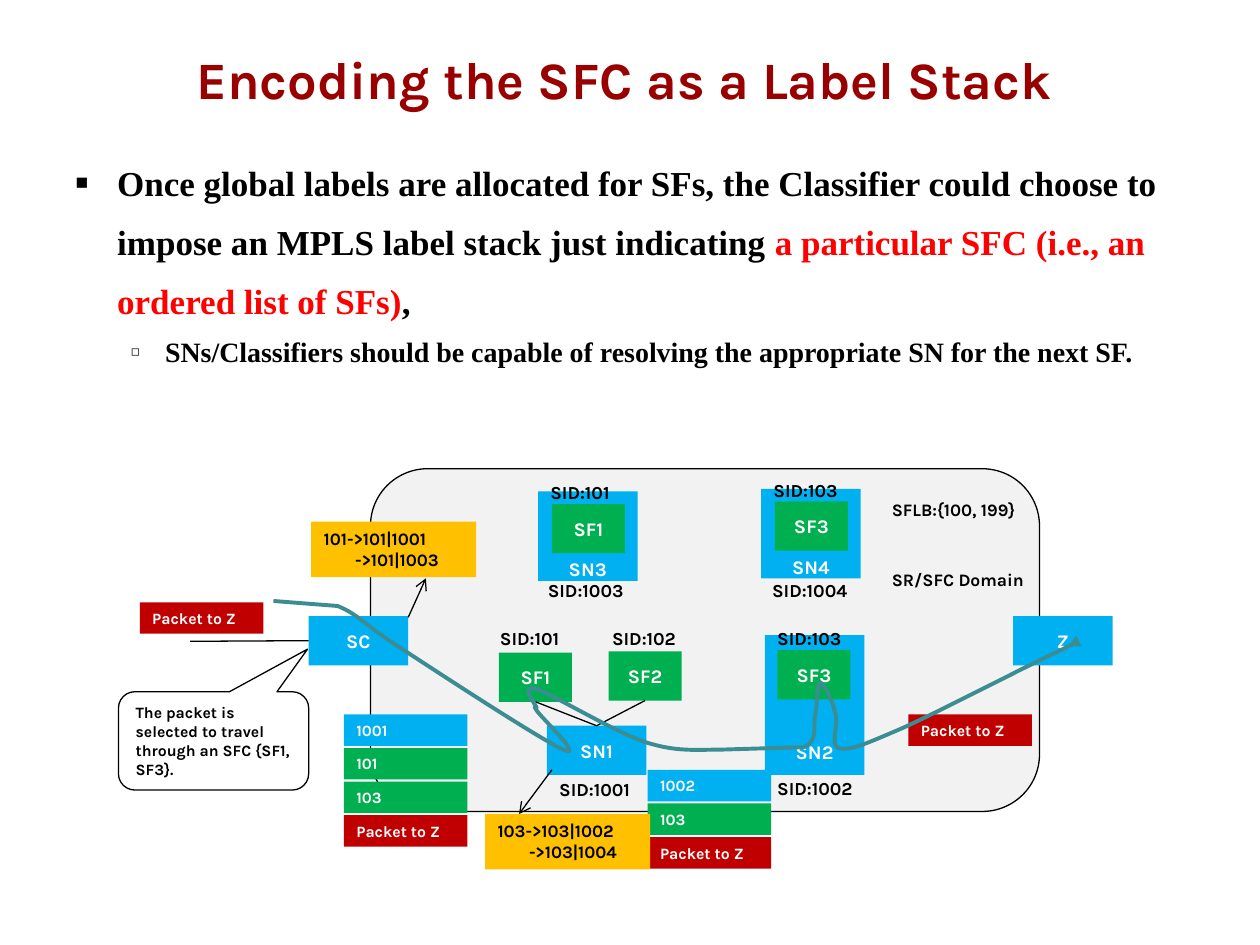
"""Build the slide on encoding a service function chain as a label stack."""
from dataclasses import dataclass

from lxml.etree import SubElement
from pptx import Presentation
from pptx.dml.color import RGBColor
from pptx.enum.shapes import MSO_CONNECTOR, MSO_SHAPE
from pptx.enum.text import MSO_ANCHOR, MSO_AUTO_SIZE, PP_ALIGN
from pptx.oxml.ns import qn
from pptx.util import Emu, Inches, Pt


@dataclass(frozen=True)
class Theme:
    display: str = "Karla"
    serif: str = "Times New Roman"
    title: str = "990000"
    ink: str = "000000"
    white: str = "FFFFFF"
    accent: str = "FF0000"
    panel: str = "F2F2F2"
    node: str = "00B0F0"
    function: str = "00B050"
    packet: str = "C00000"
    table: str = "FFC000"
    route: str = "3C8C93"
    title_size: float = 30
    point_size: float = 20
    subpoint_size: float = 16
    node_size: float = 11
    sid_size: float = 10.5
    note_size: float = 10
    small_size: float = 9
    hairline: float = 0.75
    route_width: float = 2.25


T = Theme()
COLUMNS = 10
TITLE = "Encoding the SFC as a Label Stack"
POINTS = [
    (0, "■", 60, 0.33, 0.33, T.point_size, [
        ("Once global labels are allocated for SFs, the Classifier could choose to "
         "impose an MPLS label stack just indicating ", T.ink),
        ("a particular SFC (i.e., an ordered list of SFs)", T.accent),
        (",", T.ink)]),
    (1, "◻", 50, 0.71, 0.27, T.subpoint_size, [
        ("SNs/Classifiers should be capable of resolving the appropriate SN for the next SF.",
         T.ink)]),
]
DOMAIN = (2.94, 3.72, 5.31, 2.72)
NODE_WIDTH, NODE_HEIGHT = 0.79, 0.39
NODES = [("SN1", 4.34, 5.76), ("SC", 2.45, 4.89), ("Z", 8.04, 4.89)]
HOSTS = [("SN2", 6.07, 5.04, 1.11, 0.09), ("SN4", 6.04, 3.88, 0.71, 0), ("SN3", 4.27, 3.9, 0.71, 0)]
FUNCTION_WIDTH = 0.58
FUNCTIONS = [("SF1", 3.96, 5.18), ("SF2", 4.83, 5.17), ("SF3", 6.17, 5.16),
             ("SF3", 6.15, 3.98), ("SF1", 4.38, 4)]
PACKET = ("Packet to Z", T.packet)
STACK_WIDTH, STACK_HEIGHT, STACK_PITCH = 0.98, 0.25, 0.8 / 3
STACKS = [
    (1.11, 4.78, [PACKET]),
    (2.73, 5.67, [("1001", T.node), ("101", T.function), ("103", T.function), PACKET]),
    (5.14, 6.11, [("1002", T.node), ("103", T.function), PACKET]),
    (7.21, 5.67, [PACKET]),
]
TABLES = [(3.85, 6.46, ["103->103|1002", "->103|1004"]),
          (2.47, 4.14, ["101->101|1001", "->101|1003"])]
SIDS = [("101", 3.87, 4.93), ("102", 4.76, 4.93), ("103", 6.07, 4.93), ("103", 6.04, 3.75),
        ("101", 4.27, 3.77), ("1001", 4.34, 6.13), ("1002", 6.07, 6.12),
        ("1003", 4.25, 4.55), ("1004", 6.03, 4.55)]
NOTES = [("SR/SFC Domain", 6.98, 4.47), ("SFLB:{100, 199}", 6.98, 3.91)]
CALLOUT = "The packet is selected to travel through an SFC {SF1, SF3}."
ARROWS = [((3.24, 4.9), (3.38, 4.59)), ((4.38, 6.11), (4.12, 6.46))]
ROUTE_START = (2.17, 4.77)
ROUTE = [
    [(2.68, 4.81)],
    [(2.85, 4.88), (2.89, 4.96), (3.19, 5.15)],
    [(3.48, 5.34), (4.29, 5.87), (4.47, 5.95)],
    [(4.65, 6.03), (4.29, 5.69), (4.26, 5.64)],
    [(4.22, 5.58), (4.26, 5.62), (4.26, 5.62)],
    [(4.26, 5.6), (4.11, 5.43), (4.26, 5.47)],
    [(4.4, 5.52), (4.88, 5.81), (5.12, 5.89)],
    [(5.37, 5.97), (5.52, 5.95), (5.73, 5.95)],
    [(6.38, 5.93)],
    [(6.5, 5.88), (6.45, 5.76), (6.47, 5.67)],
    [(6.49, 5.59), (6.48, 5.42), (6.51, 5.42)],
    [(6.54, 5.42), (6.61, 5.57), (6.63, 5.66)],
    [(6.66, 5.75), (6.58, 5.92), (6.66, 5.94)],
    [(6.75, 5.96), (6.88, 5.9), (7.16, 5.78)],
    [(7.45, 5.65), (8.18, 5.27), (8.4, 5.17)],
    [(8.62, 5.06), (8.55, 5.09), (8.48, 5.13)],
]

deck = Presentation()
deck.slide_width, deck.slide_height = Inches(10), Inches(7.5)
CELL = deck.slide_width // COLUMNS
slide = deck.slides.add_slide(deck.slide_layouts[1])
shapes = slide.shapes


def cells(*lengths):
    return [Emu(round(length * CELL)) for length in lengths]


def style(run, size, color, font=T.display):
    run.font.size, run.font.bold, run.font.name = Pt(size), True, font
    run.font.color.rgb = RGBColor.from_string(color)


def write(shape, lines, size, color, align=PP_ALIGN.LEFT, anchor=MSO_ANCHOR.TOP, wrap=True):
    frame = shape.text_frame
    frame.text = "\n".join(lines)
    frame.word_wrap, frame.vertical_anchor = wrap, anchor
    for paragraph in frame.paragraphs:
        paragraph.alignment = align
        style(paragraph.runs[0], size, color)
    return frame


def outline(line, color=T.ink, width=T.hairline, head=None):
    line.color.rgb, line.width = RGBColor.from_string(color), Pt(width)
    if head:
        SubElement(line._get_or_add_ln(), qn("a:tailEnd"), type=head)


def box(kind, place, fill=None, lined=False):
    shape = shapes.add_shape(kind, *cells(*place))
    shape.shadow.inherit = False
    if fill:
        shape.fill.solid()
        shape.fill.fore_color.rgb = RGBColor.from_string(fill)
    else:
        shape.fill.background()
    if lined:
        outline(shape.line)
    else:
        shape.line.fill.background()
    return shape


def block(label, left, top, width, height, fill, anchor=MSO_ANCHOR.MIDDLE):
    shape = box(MSO_SHAPE.RECTANGLE, (left, top, width, height), fill)
    write(shape, [label], T.node_size, T.white, PP_ALIGN.CENTER, anchor)
    return shape


def connect(start, end, head=None):
    link = shapes.add_connector(MSO_CONNECTOR.STRAIGHT, *cells(*start, *end))
    outline(link.line, head=head)
    SubElement(link._element.spPr, qn("a:effectLst"))
    return link


def label(text, left, top, width, size):
    write(shapes.add_textbox(*cells(left, top, width, 0.28)), [text], size, T.ink, wrap=False)


def bend(shape, segments):
    steps = iter(list(shape._element.iter(qn("a:lnTo"))))
    for segment in segments:
        first, *others = [next(steps) for _ in segment]
        if others:
            curve = first.makeelement(qn("a:cubicBezTo"))
            first.addprevious(curve)
            for step in (first, *others):
                curve.append(step[0])
                step.getparent().remove(step)


title, body = shapes.title, slide.placeholders[1]
title.left, title.top, title.width, title.height = cells(0, 0.15, 10, 0.95)
heading = write(title, [TITLE], T.title_size, T.title, PP_ALIGN.CENTER, MSO_ANCHOR.MIDDLE)
heading.margin_left, heading.margin_top, heading.margin_right, heading.margin_bottom = cells(
    0, 0.04, 0.09, 0.04)
heading.auto_size = MSO_AUTO_SIZE.NONE

body.left, body.top, body.width, body.height = cells(0.5, 1.1, 9, 3.38)
body.text_frame.text = "\n".join("".join(text for text, _ in point[-1]) for point in POINTS)
body.text_frame.auto_size = MSO_AUTO_SIZE.NONE
for paragraph, (level, mark, share, indent, hang, size, parts) in zip(
        body.text_frame.paragraphs, POINTS):
    paragraph.clear()
    paragraph.level, paragraph.line_spacing, paragraph.space_before = level, 1.4, Pt(0)
    for text, color in parts:
        run = paragraph.add_run()
        run.text = text
        style(run, size, color, T.serif)
    props = paragraph._p.get_or_add_pPr()
    props.set("marL", str(Inches(indent)))
    props.set("indent", str(-Inches(hang)))
    SubElement(SubElement(props, qn("a:buClr")), qn("a:srgbClr"), val=T.ink)
    SubElement(props, qn("a:buSzPct"), val=str(share * 1000))
    SubElement(props, qn("a:buChar"), char=mark)

box(MSO_SHAPE.ROUNDED_RECTANGLE, DOMAIN, T.panel, lined=True)
nodes = {name: block(name, left, top, NODE_WIDTH, NODE_HEIGHT, T.node)
         for name, left, top in NODES}
for name, left, top, height, gap in HOSTS:
    host = block(name, left, top, NODE_WIDTH, height, T.node, MSO_ANCHOR.BOTTOM)
    host.text_frame.margin_bottom = cells(gap)[0]
functions = [block(name, left, top, FUNCTION_WIDTH, NODE_HEIGHT, T.function)
             for name, left, top in FUNCTIONS]
for function in functions[:2]:
    link = connect((0, 0), (1, 1))
    link.begin_connect(function, 2)
    link.end_connect(nodes["SN1"], 0)
connect((1.51, 5.09), (2.45, 5.09)).end_connect(nodes["SC"], 1)
for left, top, entries in STACKS:
    for row, (text, fill) in enumerate(entries):
        entry = box(MSO_SHAPE.RECTANGLE,
                    (left, top + row * STACK_PITCH, STACK_WIDTH, STACK_HEIGHT), fill)
        write(entry, [text], T.small_size, T.white)

pen = shapes.build_freeform(*cells(*ROUTE_START))
pen.add_line_segments([cells(*point) for segment in ROUTE for point in segment], close=False)
route = pen.convert_to_shape()
bend(route, ROUTE)
route.shadow.inherit = False
route.fill.background()
outline(route.line, T.route, T.route_width, "triangle")

callout = box(MSO_SHAPE.ROUNDED_RECTANGULAR_CALLOUT, (0.94, 5.49, 1.51, 0.78), lined=True)
for index, value in enumerate((0.494, -0.934, 0.167)):
    callout.adjustments[index] = value
write(callout, [CALLOUT], T.small_size, T.ink).paragraphs[0].space_before = Pt(4.5)
for left, top, lines in TABLES:
    table = box(MSO_SHAPE.RECTANGLE, (left, top, 1.31, 0.44), T.table)
    branch = write(table, lines, T.note_size, T.ink).paragraphs[1]
    branch._p.get_or_add_pPr().set("marL", str(Inches(0.25)))
for sid, left, top in SIDS:
    label(f"SID:{sid}", left, top, 0.74 if len(sid) == 3 else 0.83, T.sid_size)
for text, left, top in NOTES:
    label(text, left, top, 1.28, T.note_size)
for start, end in ARROWS:
    connect(start, end, "arrow")

deck.save("out.pptx")
